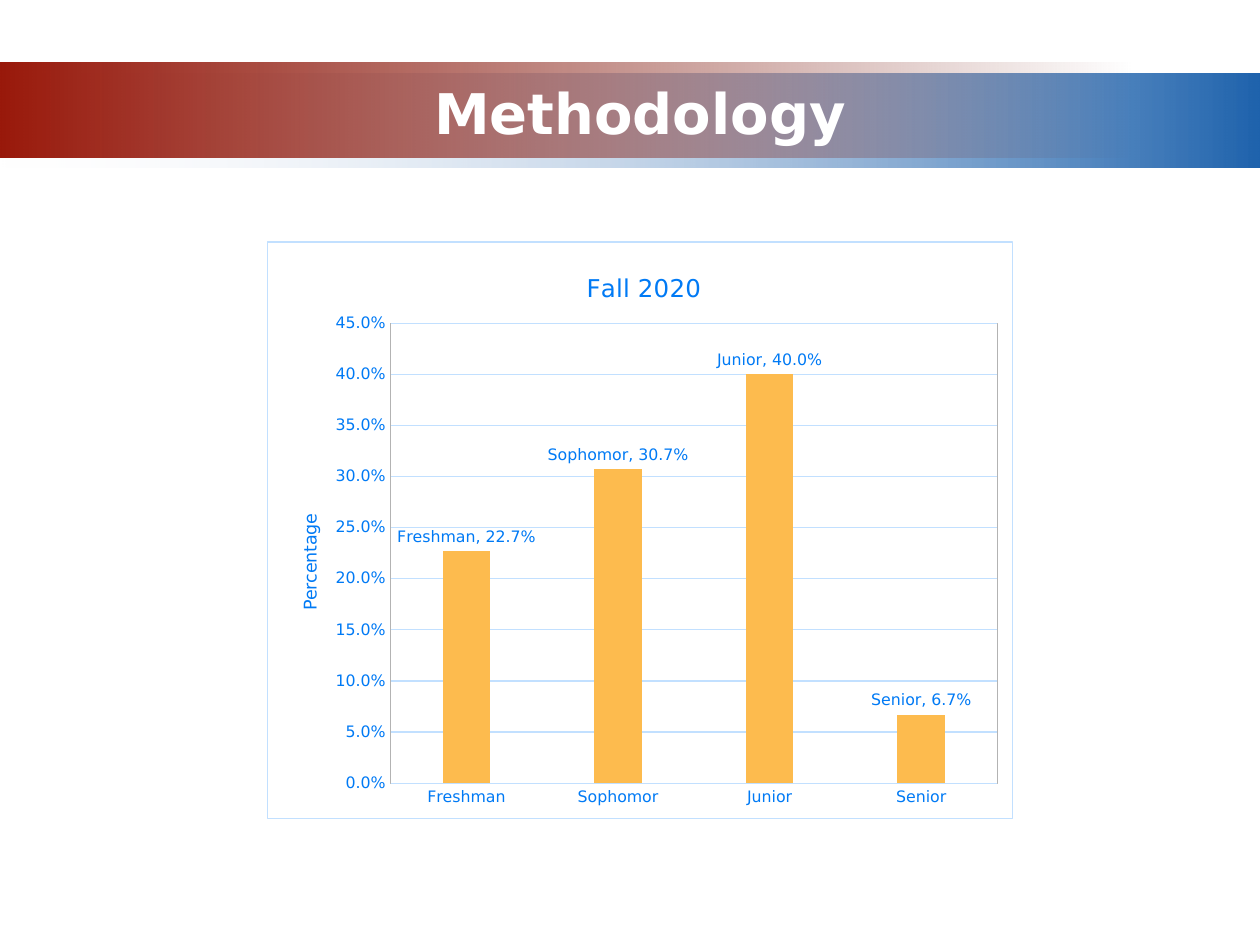
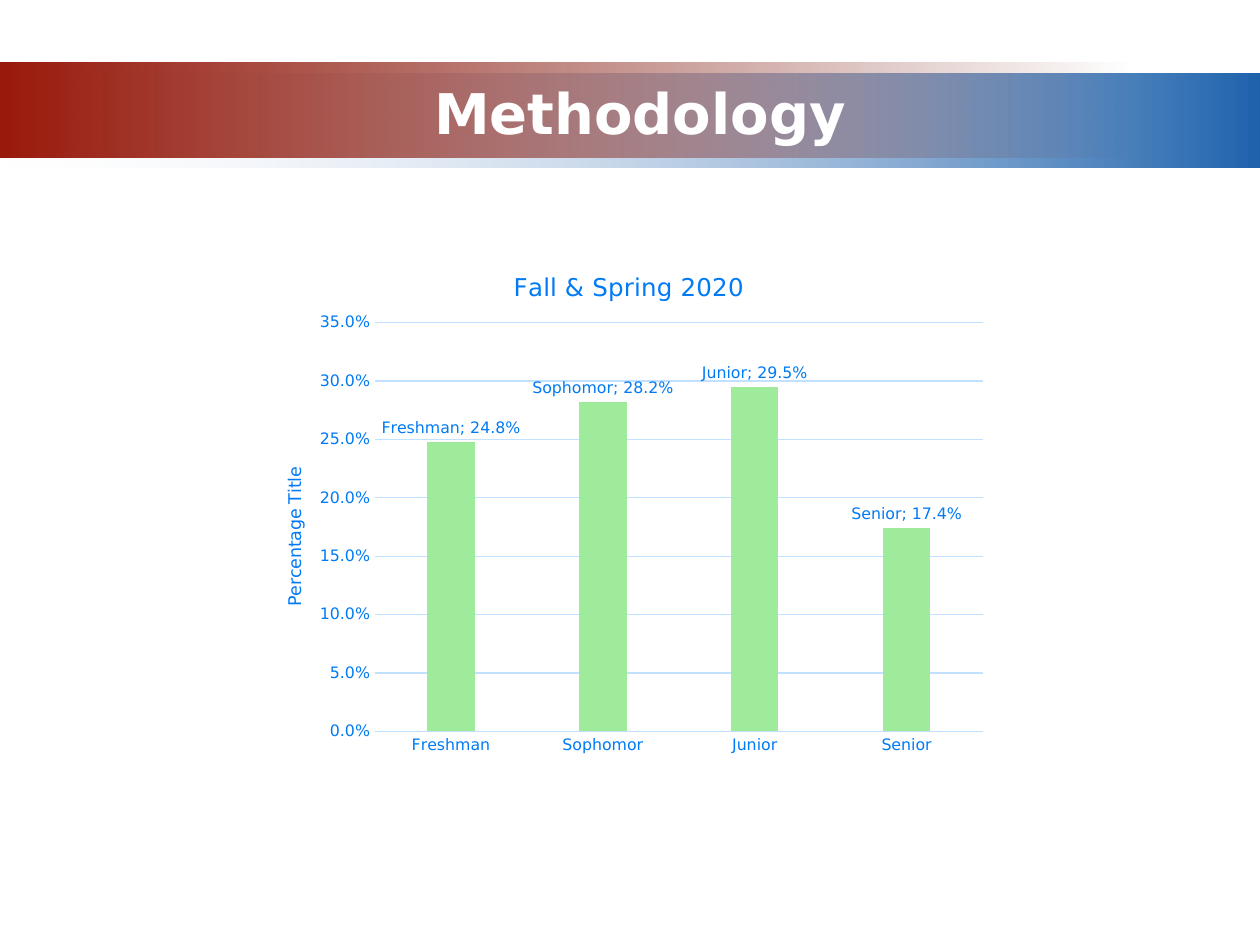
import pptx
import pptx.chart.data
import pptx.dml.color
import pptx.enum.chart
import pptx.enum.shapes
import pptx.enum.text
import pptx.oxml
import pptx.oxml.ns
import pptx.util

Pt = pptx.util.Pt
qn = pptx.oxml.ns.qn
FONT = "DejaVu Sans"
COLORS = {
    "white": "FFFFFF",
    "band_pale": "F1F2F7",
    "band_blue": "1F63AD",
    "band_red": "99190B",
    "band_maroon": "6D1208",
    "chart_text": "007AF5",
    "chart_line": "C2E0FF",
    "plot_border": "B3B3B3",
    "fall_bar": "FDBB4E",
    "year_bar": "9EEB9C",
}
CLASSES = ["Freshman", "Sophomor", "Junior", "Senior"]
CHARTS = [
    {
        "title": "Fall 2020", "title_left": 180,
        "axis_title": "Percentage", "axis_title_top": 154,
        "box": (152.64, 138, 426.24, 330),
        "values": [0.227, 0.307, 0.4, 0.067],
        "maximum": 0.45, "bar": "fall_bar", "separator": ", ", "framed": True,
    },
    {
        "title": "Fall & Spring 2020", "title_left": 147,
        "axis_title": "Percentage Title", "axis_title_top": 127,
        "box": (144, 138, 426.24, 300),
        "values": [0.248, 0.282, 0.295, 0.174],
        "maximum": 0.35, "bar": "year_bar", "separator": "; ", "framed": False,
    },
]


def rgb(name):
    return pptx.dml.color.RGBColor.from_string(COLORS[name])


def xml(prefixes, markup):
    tag, rest = markup.split(">", 1)
    return pptx.oxml.parse_xml(f"{tag} {pptx.oxml.ns.nsdecls(*prefixes)}>{rest}")


def style_font(font, size, color="chart_text", bold=False):
    font.name = FONT
    font.size = Pt(size)
    font.bold = bold
    font.color.rgb = rgb(color)


def style_line(line, color):
    line.color.rgb = rgb(color)
    line.width = Pt(0.75)


def add_band(slide, box, stops):
    band = slide.shapes.add_shape(
        pptx.enum.shapes.MSO_SHAPE.RECTANGLE, *(Pt(length) for length in box))
    band.shadow.inherit = False
    band.line.fill.background()
    markup = "".join(
        f'<a:gs pos="{position}"><a:srgbClr val="{COLORS[color]}">'
        f'<a:alpha val="{alpha}"/></a:srgbClr></a:gs>'
        for position, color, alpha in stops)
    gradient = xml(["a"], f'<a:gradFill><a:gsLst>{markup}</a:gsLst>'
                          '<a:lin ang="0" scaled="0"/></a:gradFill>')
    band.element.spPr.find(qn("a:prstGeom")).addnext(gradient)


def add_header(slide, title):
    add_band(slide, (0, 42, 720, 54),
             [(0, "band_pale", 0), (100000, "band_blue", 100000)])
    add_band(slide, (0, 36, 648, 54),
             [(0, "band_red", 100000), (100000, "band_maroon", 0)])
    text_frame = slide.shapes.add_textbox(
        Pt(-9.36), Pt(42), Pt(750.24), Pt(44.64)).text_frame
    text_frame.word_wrap = True
    text_frame.vertical_anchor = pptx.enum.text.MSO_ANCHOR.MIDDLE
    text_frame.text = title
    paragraph = text_frame.paragraphs[0]
    paragraph.alignment = pptx.enum.text.PP_ALIGN.CENTER
    style_font(paragraph.runs[0].font, 32, "white", bold=True)


def make_layout(box, left, top, size=None):
    fractions = {"x": left / box[2], "y": top / box[3]}
    target = ""
    if size:
        target = '<c:layoutTarget val="inner"/>'
        fractions.update(w=size[0] / box[2], h=size[1] / box[3])
    modes = '<c:xMode val="edge"/><c:yMode val="edge"/>'
    values = "".join(f'<c:{key} val="{value:.4f}"/>'
                     for key, value in fractions.items())
    return xml(["c"], f"<c:layout><c:manualLayout>{target}{modes}{values}"
                      "</c:manualLayout></c:layout>")


def replace_layout(element, layout):
    for previous in element.findall(qn("c:layout")):
        element.remove(previous)
    text = element.find(qn("c:tx"))
    if text is None:
        element.insert(0, layout)
    else:
        text.addnext(layout)


def write_title(title, text, size, layout):
    title.text_frame.text = text
    style_font(title.text_frame.paragraphs[0].runs[0].font, size)
    replace_layout(title.element, layout)


def make_frame(color, width):
    if color:
        line = (f'<a:ln w="{Pt(width)}"><a:solidFill>'
                f'<a:srgbClr val="{COLORS[color]}"/></a:solidFill></a:ln>')
    else:
        line = "<a:ln><a:noFill/></a:ln>"
    return xml(["c", "a"], f"<c:spPr><a:noFill/>{line}</c:spPr>")


def style_axes(chart, details):
    no_ticks = pptx.enum.chart.XL_TICK_MARK.NONE
    for axis in (chart.category_axis, chart.value_axis):
        axis.major_tick_mark = no_ticks
        axis.minor_tick_mark = no_ticks
        style_font(axis.tick_labels.font, 9)
    style_line(chart.category_axis.format.line, "chart_line")
    axis = chart.value_axis
    axis.minimum_scale = 0
    axis.maximum_scale = details["maximum"]
    axis.major_unit = 0.05
    axis.format.line.fill.background()
    axis.has_major_gridlines = True
    style_line(axis.major_gridlines.format.line, "chart_line")
    axis.tick_labels.number_format = "0.0%"
    axis.tick_labels.number_format_is_linked = False
    axis.has_title = True
    write_title(axis.axis_title, details["axis_title"], 10,
                make_layout(details["box"], 16, details["axis_title_top"]))
    body = axis.axis_title.text_frame._txBody.bodyPr
    body.set("rot", "-5400000")
    body.set("vert", "horz")


def style_columns(chart, details):
    plot = chart.plots[0]
    plot.vary_by_categories = False
    plot.gap_width = 219
    plot.overlap = -27
    fill = plot.series[0].format.fill
    fill.solid()
    fill.fore_color.rgb = rgb(details["bar"])
    plot.has_data_labels = True
    labels = plot.data_labels
    labels.show_value = True
    labels.show_category_name = True
    labels.number_format = "0.0%"
    labels.number_format_is_linked = False
    labels.position = pptx.enum.chart.XL_LABEL_POSITION.OUTSIDE_END
    style_font(labels.font, 9)
    separator = xml(["c"], f'<c:separator>{details["separator"]}</c:separator>')
    next(chart.element.iter(qn("c:showBubbleSize"))).addnext(separator)


def add_class_chart(slide, details):
    box = details["box"]
    data = pptx.chart.data.CategoryChartData(number_format="0.0%")
    data.categories = CLASSES
    data.add_series("Series 1", details["values"])
    chart = slide.shapes.add_chart(
        pptx.enum.chart.XL_CHART_TYPE.COLUMN_CLUSTERED,
        *(Pt(length) for length in box), data).chart
    style_font(chart.font, 10)
    chart.has_legend = False
    chart.has_title = True
    write_title(chart.chart_title, details["title"], 14,
                make_layout(box, details["title_left"], 14))
    style_axes(chart, details)
    style_columns(chart, details)
    plot_area = next(chart.element.iter(qn("c:plotArea")))
    replace_layout(plot_area, make_layout(
        box, 70.3, 46.5, (347.2, box[3] - 66.5)))
    framed = details["framed"]
    plot_area.append(make_frame("plot_border" if framed else None, 0.25))
    chart.element.find(qn("c:chart")).addnext(
        make_frame("chart_line" if framed else None, 0.75))


def add_chart_slide(presentation, details):
    slide = presentation.slides.add_slide(presentation.slide_layouts[6])
    add_header(slide, "Methodology")
    add_class_chart(slide, details)


def main():
    presentation = pptx.Presentation()
    presentation.slide_width = Pt(720)
    presentation.slide_height = Pt(540)
    for details in CHARTS:
        add_chart_slide(presentation, details)
    presentation.save("out.pptx")


if __name__ == "__main__":
    main()
